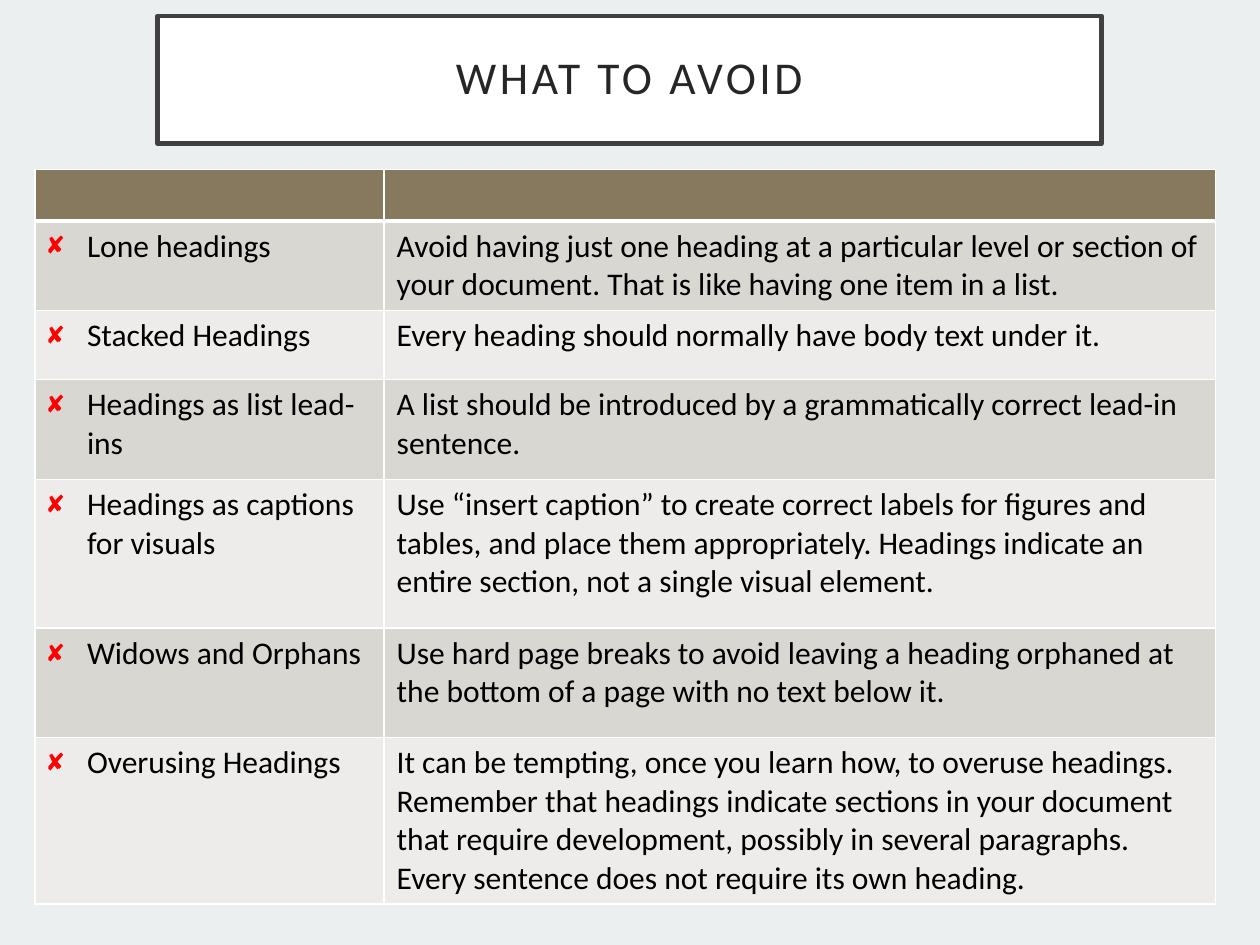
from dataclasses import dataclass

from lxml.etree import SubElement
from pptx import Presentation
from pptx.dml.color import RGBColor
from pptx.enum.text import MSO_ANCHOR as Anchor, PP_ALIGN as Align
from pptx.oxml import parse_xml
from pptx.oxml.ns import nsdecls, qn
from pptx.util import Pt

FONT = "Calibri"
WHITE, BLACK, RED = "FFFFFF", "000000", "FF0000"
HEADER_FILL = "87795D"
BAND_FILLS = ("D9D7D2", "EDECEA")
COLUMN_WIDTHS = (199.5, 475)
HEADER_HEIGHT = 28.8
BULLET_INDENT = 22.5


@dataclass
class Advice:
    mistake: str
    reason: str
    height: float


ADVICE = [
    Advice("Lone headings",
           "Avoid having just one heading at a particular level or section of "
           "your document. That is like having one item in a list.", 50.4),
    Advice("Stacked Headings",
           "Every heading should normally have body text under it.", 39.6),
    Advice("Headings as list lead-ins",
           "A list should be introduced by a grammatically correct lead-in sentence.", 57),
    Advice("Headings as captions for visuals",
           "Use “insert caption” to create correct labels for figures and tables, "
           "and place them appropriately. Headings indicate an entire section, "
           "not a single visual element.", 85),
    Advice("Widows and Orphans",
           "Use hard page breaks to avoid leaving a heading orphaned at the bottom "
           "of a page with no text below it.", 62.6),
    Advice("Overusing Headings",
           "It can be tempting, once you learn how, to overuse headings. Remember "
           "that headings indicate sections in your document that require "
           "development, possibly in several paragraphs. Every sentence does not "
           "require its own heading.", 90.7),
]


def paint(fill, color: str) -> None:
    fill.solid()
    fill.fore_color.rgb = RGBColor.from_string(color)


def set_all(target, values: dict) -> None:
    for name, value in values.items():
        setattr(target, name, value)


def write(para, text: str, size: float, color: str):
    span = para.add_run()
    span.text = text
    set_all(span.font, {"name": FONT, "size": Pt(size), "bold": False})
    paint(span.font.fill, color)
    return span


def style_cell(cell, color: str, bottom: float = 1) -> None:
    """Fill a cell and give it white borders."""
    paint(cell.fill, color)
    properties = cell._tc.get_or_add_tcPr()
    for index, (side, width) in enumerate(zip("LRTB", (1, 1, 1, bottom))):
        properties.insert(index, parse_xml(
            f'<a:ln{side} {nsdecls("a")} w="{Pt(width)}"><a:solidFill>'
            f'<a:srgbClr val="{WHITE}"/></a:solidFill></a:ln{side}>'))


def add_bullet(para, mark: str, color: str) -> None:
    properties = para._p.get_or_add_pPr()
    properties.set("marL", str(Pt(BULLET_INDENT)))
    properties.set("indent", str(-Pt(BULLET_INDENT)))
    SubElement(SubElement(properties, qn("a:buClr")), qn("a:srgbClr"), val=color)
    SubElement(properties, qn("a:buChar"), char=mark)


def add_title(page, text: str) -> None:
    box = page.shapes.title
    set_all(box, {"left": Pt(90), "top": Pt(9), "width": Pt(539.5), "height": Pt(73)})
    paint(box.fill, WHITE)
    paint(box.line.fill, "404040")
    box.line.width = Pt(2.5)
    frame = box.text_frame
    set_all(frame, {"vertical_anchor": Anchor.MIDDLE, "word_wrap": True})
    set_all(frame, {f"margin_{side}": Pt(14.4) for side in ("left", "top", "right", "bottom")})
    para = frame.paragraphs[0]
    set_all(para, {"alignment": Align.CENTER, "line_spacing": 0.9})
    span = write(para, text, 26, "262626")
    span._r.get_or_add_rPr().set("spc", "200")


def add_advice_table(page, advice: list[Advice]) -> None:
    heights = [HEADER_HEIGHT] + [item.height for item in advice]
    table = page.shapes.add_table(len(heights), len(COLUMN_WIDTHS), Pt(20), Pt(97),
                                  Pt(sum(COLUMN_WIDTHS)), Pt(sum(heights))).table
    for column, width in zip(table.columns, COLUMN_WIDTHS):
        column.width = Pt(width)
    for row, height in zip(table.rows, heights):
        row.height = Pt(height)

    # Empty header row
    for cell in table.rows[0].cells:
        style_cell(cell, HEADER_FILL, bottom=3)

    # Banded rows: mistake on the left, reason on the right
    for number, item in enumerate(advice):
        cells = table.rows[number + 1].cells
        for cell, text in zip(cells, (item.mistake, item.reason)):
            style_cell(cell, BAND_FILLS[number % 2])
            write(cell.text_frame.paragraphs[0], text, 18, BLACK)
        add_bullet(cells[0].text_frame.paragraphs[0], "✘", RED)


def main() -> None:
    deck = Presentation()
    set_all(deck, {"slide_width": Pt(720), "slide_height": Pt(540)})
    page = deck.slides.add_slide(deck.slide_layouts[5])
    paint(page.background.fill, "EBEFF0")
    add_title(page, "WHAT TO AVOID")
    add_advice_table(page, ADVICE)
    deck.save("out.pptx")


if __name__ == "__main__":
    main()
